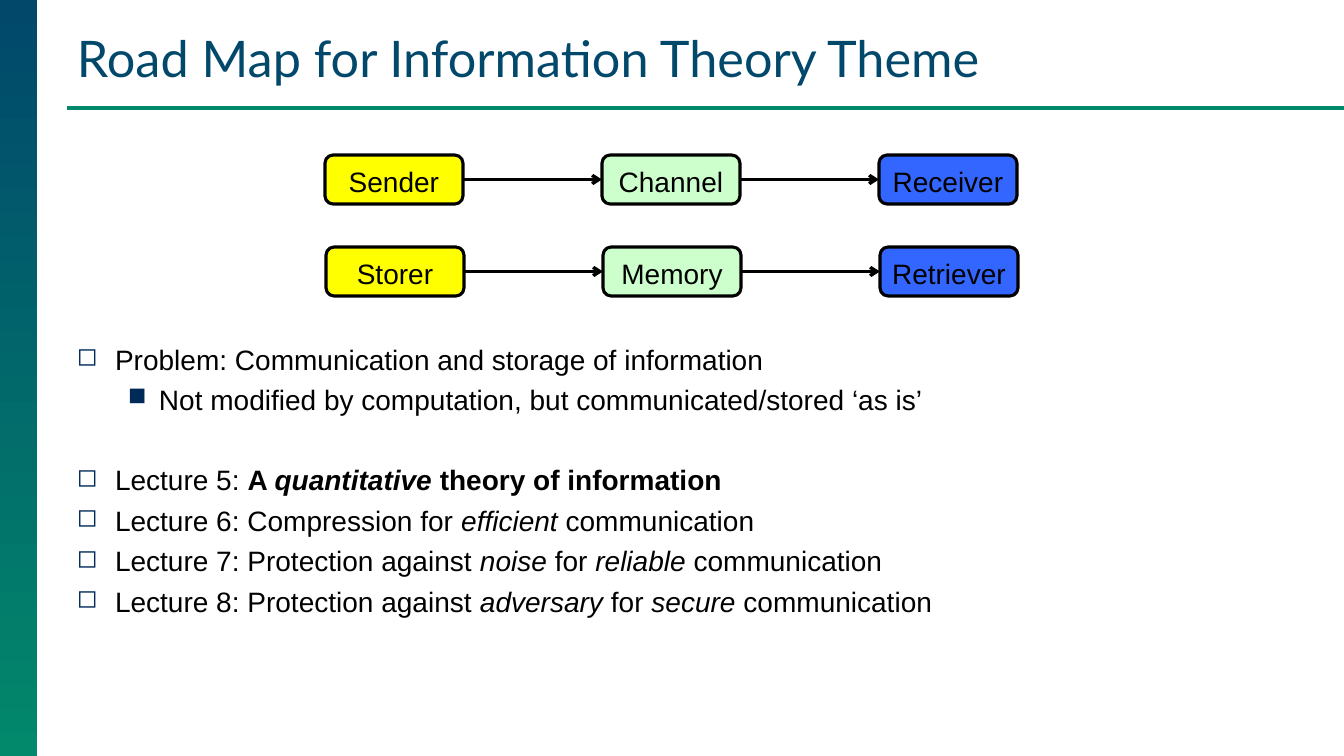
import dataclasses

import lxml.etree
import pptx
import pptx.dml.color
import pptx.enum.shapes
import pptx.enum.text
import pptx.oxml.ns
import pptx.util

WIDE, HIGH = 1344, 756
SCALE = 12192000 / WIDE


@dataclasses.dataclass(frozen=True)
class Theme:
    navy: str = "01486B"
    green: str = "02886B"
    mark: str = "002A58"
    ink: str = "000000"
    fills: tuple = ("FFFF00", "CCFFCC", "3366FF")
    font: str = "Arial"
    head: str = "Lato"
    title: int = 36
    body: int = 20
    line: float = 2.25


def px(value):
    return pptx.util.Emu(round(value * SCALE))


def rgb(code):
    return pptx.dml.color.RGBColor.from_string(code)


def child(parent, tag, **attrs):
    node = lxml.etree.SubElement(parent, pptx.oxml.ns.qn(tag))
    for key, value in attrs.items():
        node.set(key, value)
    return node


def write(para, text, *, font, size, color, bold=False, italic=False):
    run = para.add_run()
    run.text = text
    run.font.name = font
    run.font.size = pptx.util.Pt(size)
    run.font.color.rgb = rgb(color)
    run.font.bold = bold
    run.font.italic = italic


class Deck:
    def __init__(self, theme):
        self.theme = theme
        self.show = pptx.Presentation()
        self.show.slide_width = px(WIDE)
        self.show.slide_height = px(HIGH)
        self.slide = self.show.slides.add_slide(self.show.slide_layouts[6])

    def frame(self, shape, anchor, pads, wrap=True):
        frame = shape.text_frame
        frame.word_wrap = wrap
        frame.vertical_anchor = anchor
        (frame.margin_left, frame.margin_top,
         frame.margin_right, frame.margin_bottom) = map(px, pads)
        return frame

    def band(self, x, y, w, h):
        shape = self.slide.shapes.add_shape(
            pptx.enum.shapes.MSO_SHAPE.RECTANGLE, px(x), px(y), px(w), px(h))
        shape.shadow.inherit = False
        shape.line.fill.background()
        shape.fill.gradient()
        shape.fill.gradient_angle = 270
        for stop, code in zip(shape.fill.gradient_stops,
                              (self.theme.navy, self.theme.green)):
            stop.color.rgb = rgb(code)

    def line(self, start, end, color):
        link = self.slide.shapes.add_connector(
            pptx.enum.shapes.MSO_CONNECTOR.STRAIGHT,
            *map(px, start), *map(px, end))
        link.line.color.rgb = rgb(color)
        link.line.width = pptx.util.Pt(self.theme.line)
        child(link._element.spPr, "a:effectLst")
        return link

    def arrow(self, left, right):
        link = self.line((0, 0), (0, 0), self.theme.ink)
        link.begin_connect(left, 3)
        link.end_connect(right, 1)
        link.line._get_or_add_ln().append(
            pptx.oxml.parse_xml(
                f'<a:tailEnd {pptx.oxml.ns.nsdecls("a")} type="arrow"/>'))

    def node(self, x, y, w, h, text, fill):
        theme = self.theme
        shape = self.slide.shapes.add_shape(
            pptx.enum.shapes.MSO_SHAPE.ROUNDED_RECTANGLE,
            px(x), px(y), px(w), px(h))
        shape.shadow.inherit = False
        shape.fill.solid()
        shape.fill.fore_color.rgb = rgb(fill)
        shape.line.color.rgb = rgb(theme.ink)
        shape.line.width = pptx.util.Pt(theme.line)
        frame = self.frame(shape, pptx.enum.text.MSO_ANCHOR.MIDDLE,
                           (10, 5, 10, 1), wrap=False)
        para = frame.paragraphs[0]
        para.alignment = pptx.enum.text.PP_ALIGN.CENTER
        write(para, text, font=theme.font, size=theme.body, color=theme.ink)
        return shape

    def flow(self, x, y, names):
        nodes = [self.node(x + 277 * i, y, 138, 49, name, fill)
                 for i, (name, fill) in enumerate(zip(names, self.theme.fills))]
        for left, right in zip(nodes, nodes[1:]):
            self.arrow(left, right)

    def title(self, x, y, w, h, text):
        box = self.slide.shapes.add_textbox(px(x), px(y), px(w), px(h))
        frame = self.frame(box, pptx.enum.text.MSO_ANCHOR.BOTTOM, (10, 5, 10, 5))
        write(frame.paragraphs[0], text, font=self.theme.head,
              size=self.theme.title, color=self.theme.navy)

    def bullet(self, para, level):
        char, left, hang = (("◻", 38, 38), ("■", 82, 31))[level]
        para.level = level
        props = para._p.get_or_add_pPr()
        props.set("marL", str(px(left)))
        props.set("indent", str(-px(hang)))
        child(child(props, "a:buClr"), "a:srgbClr", val=self.theme.mark)
        child(props, "a:buSzPct", val="90000")
        child(props, "a:buChar", char=char)

    def body(self, x, y, w, h, items):
        theme = self.theme
        box = self.slide.shapes.add_textbox(px(x), px(y), px(w), px(h))
        frame = self.frame(box, pptx.enum.text.MSO_ANCHOR.TOP, (10, 0, 10, 0))
        for i, (level, gap, runs) in enumerate(items):
            para = frame.add_paragraph() if i else frame.paragraphs[0]
            self.bullet(para, level)
            para.space_before = pptx.util.Pt(gap)
            for text, style in runs:
                write(para, text, font=theme.font, size=theme.body,
                      color=theme.ink, bold="b" in style, italic="i" in style)


def main():
    theme = Theme()
    deck = Deck(theme)
    deck.band(0, 0, 37, HIGH)
    deck.line((67, 108), (WIDE, 108), theme.green)
    deck.title(67, 21, 1248, 72, "Road Map for Information Theory Theme")
    deck.flow(325, 155, ("Sender", "Channel", "Receiver"))
    deck.flow(326, 247, ("Storer", "Memory", "Retriever"))
    deck.body(67, 342, 1199, 353, [
        (0, 0, [("Problem: Communication and storage of information", "")]),
        (1, 5, [("Not modified by computation, but communicated/stored ‘as is’", "")]),
        (0, 33, [("Lecture 5: ", ""), ("A ", "b"), ("quantitative", "bi"),
                 (" theory of information", "b")]),
        (0, 5, [("Lecture 6: Compression for ", ""), ("efficient", "i"),
                (" communication", "")]),
        (0, 5, [("Lecture 7: Protection against ", ""), ("noise", "i"),
                (" for ", ""), ("reliable", "i"), (" communication", "")]),
        (0, 5, [("Lecture 8: Protection against ", ""), ("adversary", "i"),
                (" for ", ""), ("secure", "i"), (" communication", "")]),
    ])
    deck.show.save("out.pptx")


if __name__ == "__main__":
    main()
